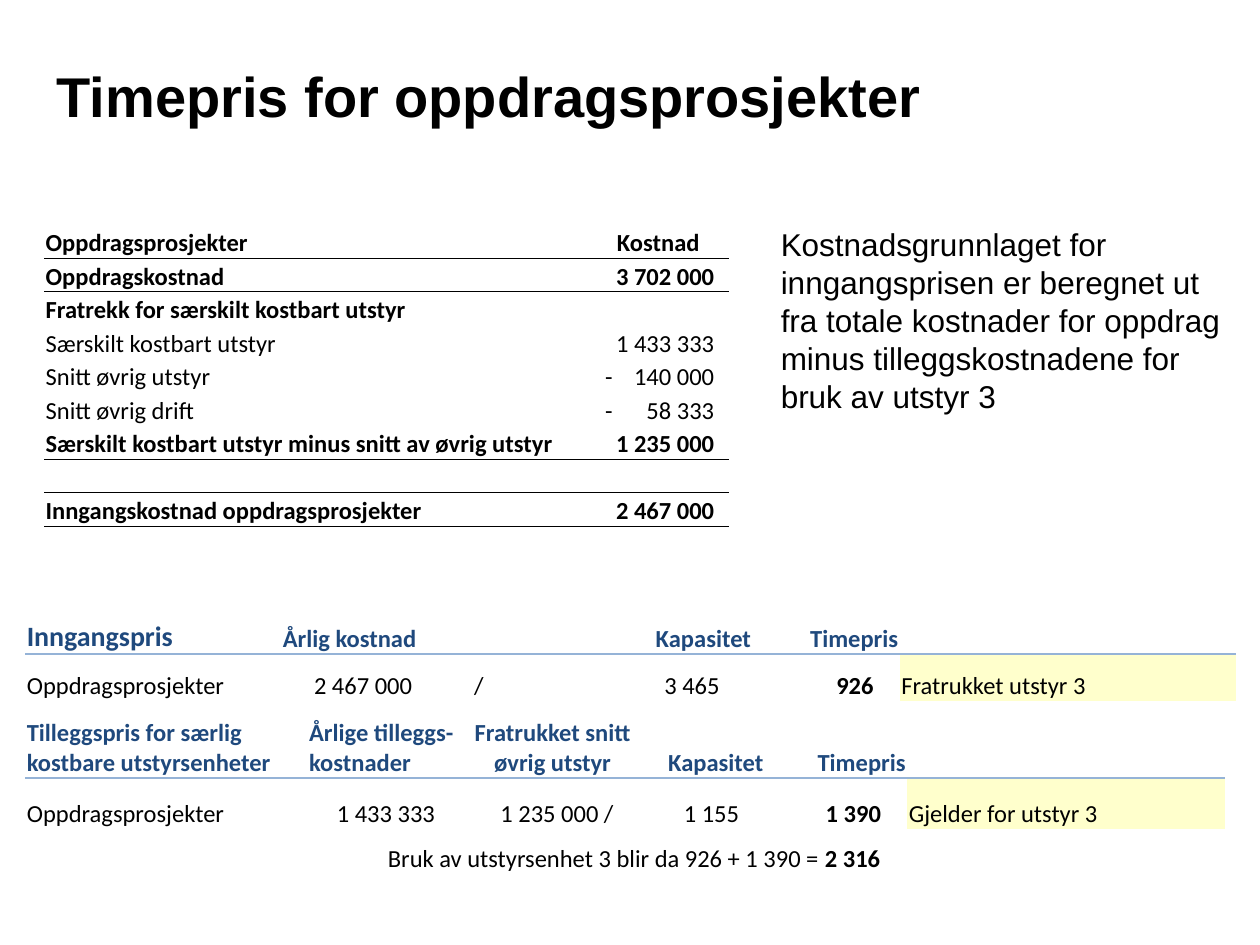
from dataclasses import dataclass

from lxml import etree
from pptx import Presentation
from pptx.dml.color import RGBColor
from pptx.enum import text
from pptx.oxml import ns
from pptx.util import Cm, Pt

BLACK, NAVY, BLUE, YELLOW = "000000", "1F497D", "95B3D7", "FFFFCC"
LEFT, CENTER, RIGHT = text.PP_ALIGN.LEFT, text.PP_ALIGN.CENTER, text.PP_ALIGN.RIGHT
NO_STYLE = "{2D5ABB26-0587-4C30-8999-92F81FD0307C}"
INSET = 0.03


@dataclass
class Cell:
    content: str = ""
    bold: bool = False
    align: text.PP_ALIGN = LEFT
    color: str = BLACK
    size: float = 14
    left: float = INSET
    right: float = INSET
    fill: str = ""
    tab: float = 0


@dataclass
class Grid:
    """A table in cm; ruled holds the rows with a line below them."""
    left: float
    top: float
    cols: list[float]
    rows: list[float]
    cells: list[list[Cell]]
    ruled: set[int]
    line: str
    weight: float


def rgb(value: str) -> RGBColor:
    return RGBColor.from_string(value)


def add_run(p, content: str, size: float, bold: bool = False,
            color: str = BLACK, font: str = "Calibri") -> None:
    r = p.add_run()
    r.text = content
    r.font.size, r.font.bold, r.font.name = Pt(size), bold, font
    r.font.color.rgb = rgb(color)


def add_text(s, left: float, top: float, width: float, height: float,
             anchor=text.MSO_ANCHOR.TOP):
    """Add an empty wrapping text box and return its paragraph."""
    tf = s.shapes.add_textbox(Cm(left), Cm(top), Cm(width), Cm(height)).text_frame
    tf.word_wrap = True
    tf.vertical_anchor = anchor
    return tf.paragraphs[0]


def add_border(cell, tag: str, color: str, weight: float) -> None:
    ln = etree.Element(ns.qn(tag), w=str(int(Pt(weight))))
    fill = etree.SubElement(ln, ns.qn("a:solidFill"))
    etree.SubElement(fill, ns.qn("a:srgbClr"), val=color)
    cell._tc.get_or_add_tcPr().insert(0, ln)


def fill_cell(cell, data: Cell) -> None:
    cell.margin_left, cell.margin_right = Cm(data.left), Cm(data.right)
    cell.margin_top, cell.margin_bottom = Cm(INSET), 0
    cell.vertical_anchor = text.MSO_ANCHOR.BOTTOM
    if data.fill:
        cell.fill.solid()
        cell.fill.fore_color.rgb = rgb(data.fill)
    else:
        cell.fill.background()
    p = cell.text_frame.paragraphs[0]
    p.alignment = data.align
    if data.tab:
        tabs = etree.SubElement(p._p.get_or_add_pPr(), ns.qn("a:tabLst"))
        etree.SubElement(tabs, ns.qn("a:tab"), pos=str(int(Cm(data.tab))), algn="r")
    if data.content:
        add_run(p, data.content, data.size, data.bold, data.color)
    else:
        etree.SubElement(p._p, ns.qn("a:endParaRPr"), sz=str(int(data.size * 100)))


def add_grid(s, grid: Grid) -> None:
    frame = s.shapes.add_table(len(grid.rows), len(grid.cols), Cm(grid.left), Cm(grid.top),
                               Cm(sum(grid.cols)), Cm(sum(grid.rows)))
    table = frame.table
    table.first_row = table.horz_banding = False
    table._tbl.tblPr.find(ns.qn("a:tableStyleId")).text = NO_STYLE
    for column, width in zip(table.columns, grid.cols):
        column.width = Cm(width)
    for row, height in zip(table.rows, grid.rows):
        row.height = Cm(height)
    for i, row_data in enumerate(grid.cells):
        for j, data in enumerate(row_data):
            cell = table.cell(i, j)
            fill_cell(cell, data)
            if i in grid.ruled:
                add_border(cell, "a:lnB", grid.line, grid.weight)
            if i - 1 in grid.ruled:
                add_border(cell, "a:lnT", grid.line, grid.weight)


def heading(content: str, align=LEFT, size: float = 14) -> Cell:
    return Cell(content, True, align, NAVY, size)


def number(content: str, right: float, bold: bool = False) -> Cell:
    return Cell(content, bold, RIGHT, right=right)


def cost_row(label: str, amount: str = "", bold: bool = False) -> list[Cell]:
    return [Cell(label, bold), number(amount, 0.29, bold)]


def deduction_row(label: str, amount: str) -> list[Cell]:
    """A cost row with a minus sign in front and the amount at a right tab."""
    return [Cell(label), Cell(f"-\t{amount}", left=0.35, tab=2.2)]


def main() -> None:
    prs = Presentation()
    prs.slide_width, prs.slide_height = Cm(25.4), Cm(19.05)
    s = prs.slides.add_slide(prs.slide_layouts[6])

    p = add_text(s, 0.89, 0.33, 24, 3.18, text.MSO_ANCHOR.MIDDLE)
    add_run(p, "Timepris for oppdragsprosjekter", 32, True, font="Arial")

    p = add_text(s, 15.49, 4.42, 9.6, 4.11)
    add_run(p, "Kostnadsgrunnlaget for inngangsprisen er beregnet ut fra totale kostnader "
               "for oppdrag minus tilleggskostnadene for bruk av utstyr 3", 18, font="Arial")

    costs = [
        [Cell("Oppdragsprosjekter", True), Cell("Kostnad", True, CENTER)],
        cost_row("Oppdragskostnad", "3 702 000", True),
        cost_row("Fratrekk for særskilt kostbart utstyr", bold=True),
        cost_row("Særskilt kostbart utstyr", "1 433 333"),
        deduction_row("Snitt øvrig utstyr", "140 000"),
        deduction_row("Snitt øvrig drift", "58 333"),
        cost_row("Særskilt kostbart utstyr minus snitt av øvrig utstyr", "1 235 000", True),
        cost_row(""),
        cost_row("Inngangskostnad oppdragsprosjekter", "2 467 000", True),
    ]
    add_grid(s, Grid(0.89, 4.53, [10.96, 2.84], [6.08 / len(costs)] * len(costs), costs,
                     {0, 6, 8}, BLACK, 0.5))

    entry_price = [
        [heading("Inngangspris", size=16), heading("Årlig kostnad"), Cell(),
         heading("Kapasitet", RIGHT), heading("Timepris", RIGHT), Cell()],
        [Cell("Oppdragsprosjekter"), number("2 467 000", 0.23), Cell("/", left=1.02),
         Cell("3 465", align=CENTER), number("926", 0.53, True),
         Cell("Fratrukket utstyr 3", fill=YELLOW)],
    ]
    add_grid(s, Grid(0.51, 12.33, [5.16, 2.87, 4.19, 2.44, 2.97, 6.78], [0.85, 0.95],
                     entry_price, {0}, BLUE, 1))

    extra_price = [
        [heading("Tilleggspris for særlig kostbare utstyrsenheter"),
         heading("Årlige tilleggs-kostnader"),
         heading("Fratrukket snitt øvrig utstyr", CENTER),
         heading("Kapasitet", RIGHT), heading("Timepris", RIGHT), Cell()],
        [Cell("Oppdragsprosjekter"), number("1 433 333", 0.53), number("1 235 000 /", 0.61),
         number("1 155", 0.52), number("1 390", 0.53, True),
         Cell("Gjelder for utstyr 3", fill=YELLOW)],
    ]
    add_grid(s, Grid(0.51, 14.13, [5.69, 3.1, 3.68, 2.44, 2.87, 6.4], [1.55, 1.04],
                     extra_price, {0}, BLUE, 1))

    p = add_text(s, 7.57, 16.87, 14.4, 0.86)
    add_run(p, "Bruk av utstyrsenhet 3 blir da 926 + 1 390 = ", 14)
    add_run(p, "2 316", 14, True)

    prs.save("out.pptx")


if __name__ == "__main__":
    main()
